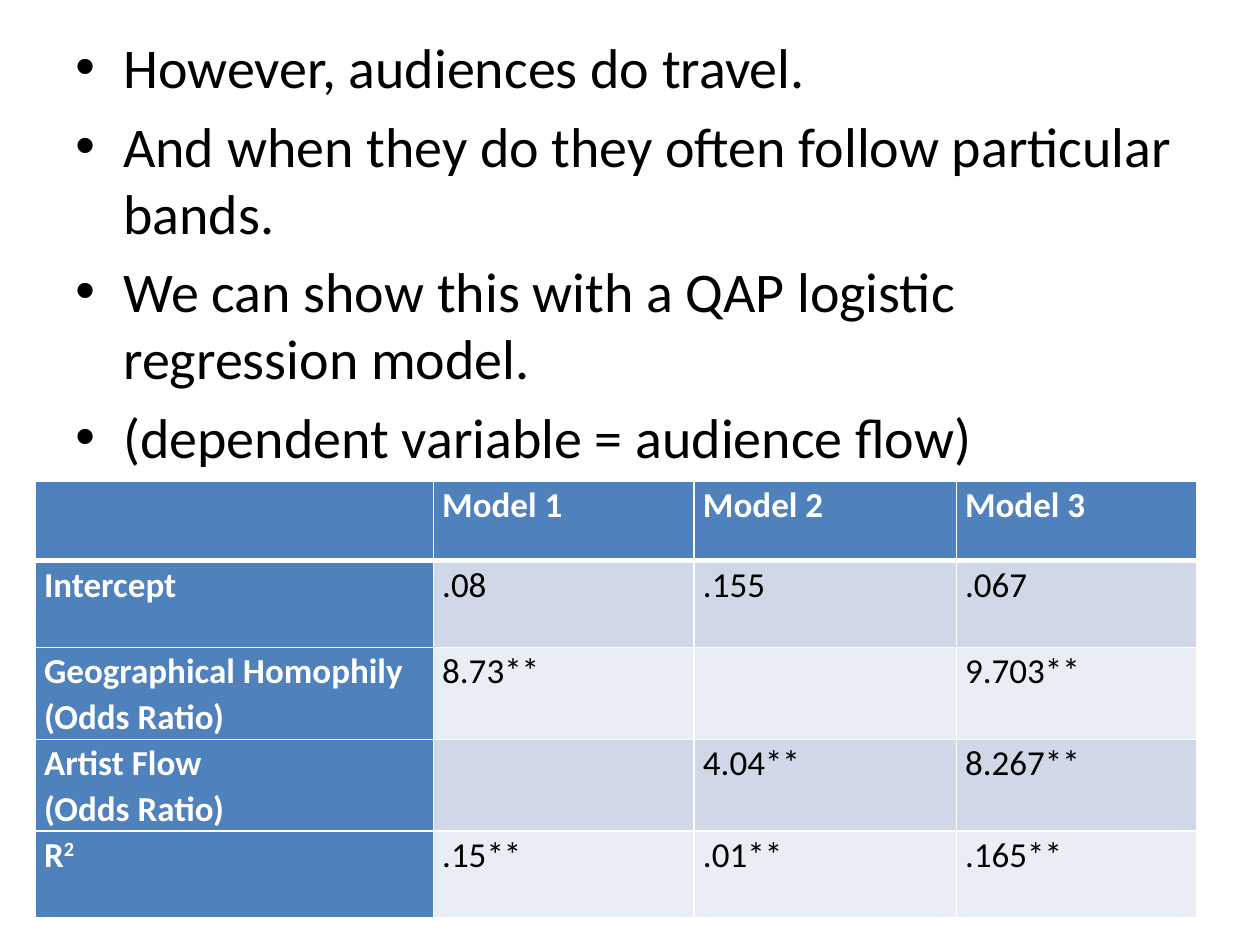
from dataclasses import dataclass

import pptx
import pptx.dml.color
import pptx.enum.text
import pptx.oxml
import pptx.oxml.ns
import pptx.util
from pptx.util import Inches, Pt


@dataclass(frozen=True)
class Theme:
    font: str = "Calibri"
    bullet_size: int = 32
    table_size: int = 20
    text: str = "000000"
    white: str = "FFFFFF"
    heading_fill: str = "4F81BD"
    bands: tuple = ("E9EDF4", "D0D8E8")


theme = Theme()
rgb = pptx.dml.color.RGBColor.from_string


def style_paragraph(paragraph, size, color, bold=False):
    paragraph.font.name = theme.font
    paragraph.font.size = Pt(size)
    paragraph.font.color.rgb = rgb(color)
    paragraph.font.bold = bold


def add_border(cell, side, width):
    """Draw a white line on one side (L, R, T or B) of a cell."""
    cell._tc.get_or_add_tcPr().append(pptx.oxml.parse_xml(
        f'<a:ln{side} {pptx.oxml.ns.nsdecls("a")} w="{Pt(width)}">'
        f'<a:solidFill><a:srgbClr val="{theme.white}"/></a:solidFill></a:ln{side}>'))


deck = pptx.Presentation()
deck.slide_width, deck.slide_height = Inches(10), Inches(7.5)
slide = deck.slides.add_slide(deck.slide_layouts[6])

# Argument
points = [
    "However, audiences do travel.",
    "And when they do they often follow particular bands.",
    "We can show this with a QAP logistic regression model.",
    "(dependent variable = audience flow)",
]
argument = slide.shapes.add_textbox(Inches(0.5), Inches(0.21), Inches(9), Inches(3.31)).text_frame
argument.word_wrap = True
argument.auto_size = pptx.enum.text.MSO_AUTO_SIZE.NONE
for index, point in enumerate(points):
    paragraph = argument.paragraphs[0] if index == 0 else argument.add_paragraph()
    paragraph.text = point
    paragraph.space_before = Pt(theme.bullet_size * 0.2)
    style_paragraph(paragraph, theme.bullet_size, theme.text)
    properties = paragraph._p.get_or_add_pPr()
    properties.set("marL", str(Inches(0.38)))
    properties.set("indent", str(-Inches(0.38)))
    for bullet in ('<a:buFont {} typeface="Arial"/>', '<a:buChar {} char="•"/>'):
        bullet_xml = pptx.oxml.parse_xml(bullet.format(pptx.oxml.ns.nsdecls("a")))
        properties.insert_element_before(bullet_xml, "a:tabLst", "a:defRPr", "a:extLst")

# Regression results
results = [
    ["", "Model 1", "Model 2", "Model 3"],
    ["Intercept", ".08", ".155", ".067"],
    ["Geographical Homophily\n(Odds Ratio)", "8.73**", "", "9.703**"],
    ["Artist Flow\n(Odds Ratio)", "", "4.04**", "8.267**"],
    ["R", ".15**", ".01**", ".165**"],
]
column_widths = [3.16, 2.07, 2.08, 1.91]
row_heights = [0.63] + [0.69] * 4
table = slide.shapes.add_table(
    len(results), len(column_widths), Inches(0.28), Inches(3.82),
    Inches(sum(column_widths)), Inches(sum(row_heights))).table
for column, width in zip(table.columns, column_widths):
    column.width = Inches(width)
for row, height in zip(table.rows, row_heights):
    row.height = Inches(height)

for row_index, values in enumerate(results):
    for column_index, value in enumerate(values):
        cell = table.cell(row_index, column_index)
        is_heading = row_index == 0 or column_index == 0
        cell.margin_left = cell.margin_right = Inches(0.07)
        cell.margin_top = cell.margin_bottom = 0
        add_border(cell, "L", 1)
        add_border(cell, "R", 1)
        add_border(cell, "T", 3 if row_index == 1 else 1)
        add_border(cell, "B", 3 if row_index == 0 else 1)
        cell.fill.solid()
        cell.fill.fore_color.rgb = rgb(
            theme.heading_fill if is_heading else theme.bands[row_index % 2])
        cell.text_frame.text = value
        for paragraph in cell.text_frame.paragraphs:
            paragraph.line_spacing = 1.07
            style_paragraph(paragraph, theme.table_size,
                            theme.white if is_heading else theme.text, is_heading)

exponent = table.cell(4, 0).text_frame.paragraphs[0].add_run()
exponent.text = "2"
exponent._r.get_or_add_rPr().set("baseline", "30000")

deck.save("out.pptx")
